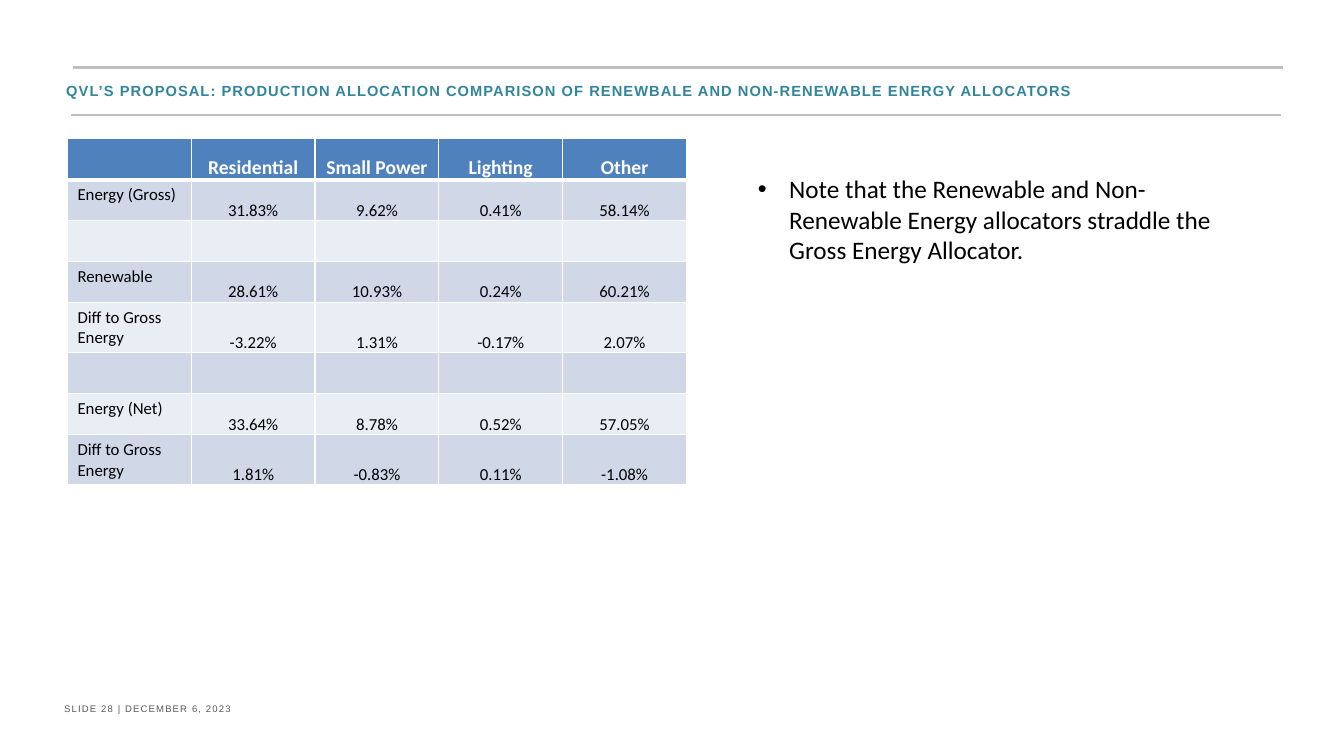
from lxml import etree
from pptx import Presentation, util as u
from pptx.dml import color
from pptx.enum import shapes, text
from pptx.oxml import ns

HEADINGS = ["", "Residential", "Small Power", "Lighting", "Other"]
BLANK_ROW = [""] * 5
ALLOCATORS = [
    HEADINGS,
    ["Energy (Gross)", "31.83%", "9.62%", "0.41%", "58.14%"],
    BLANK_ROW,
    ["Renewable", "28.61%", "10.93%", "0.24%", "60.21%"],
    ["Diff to Gross Energy", "-3.22%", "1.31%", "-0.17%", "2.07%"],
    BLANK_ROW,
    ["Energy (Net)", "33.64%", "8.78%", "0.52%", "57.05%"],
    ["Diff to Gross Energy", "1.81%", "-0.83%", "0.11%", "-1.08%"],
]


def rgb(value):
    return color.RGBColor.from_string(value)


def add_element(parent, tag, **attributes):
    return etree.SubElement(parent, ns.qn(tag), attributes)


class AllocationSlide:
    RULE = "BFBFBF"
    HEADER = "4F81BD"
    BANDS = ["E9EDF4", "D0D8E8"]
    TITLE = dict(name="Arial", size=u.Pt(10.5), bold=True, color="31859C")
    FOOTER = dict(name="Arial", size=u.Pt(6.8), color="595959")
    NOTE = dict(name="Calibri", size=u.Pt(18), color="000000")
    HEADING = dict(name="Calibri", size=u.Pt(14), bold=True, color="FFFFFF")
    BODY = dict(name="Calibri", size=u.Pt(12), bold=False, color="000000")
    VALUE_CELL = dict(
        vertical_anchor=text.MSO_ANCHOR.BOTTOM,
        margin_left=u.Cm(0.02),
        margin_right=u.Cm(0.02),
        margin_top=u.Cm(0.02),
        margin_bottom=0,
    )

    def __init__(self, deck):
        self.slide = deck.slides.add_slide(deck.slide_layouts[6])

    def style(self, font, values):
        for key, value in values.items():
            if key == "color":
                font.color.rgb = rgb(value)
            else:
                setattr(font, key, value)

    def rule(self, left, top, width):
        line = self.slide.shapes.add_connector(
            shapes.MSO_CONNECTOR.STRAIGHT,
            u.Cm(left), u.Cm(top), u.Cm(left + width), u.Cm(top),
        )
        line.line.color.rgb = rgb(self.RULE)
        line.line.width = u.Pt(1.5)
        add_element(line._element.spPr, "a:effectLst")

    def label(self, words, box, values, spacing=None, bullet=None,
              anchor=text.MSO_ANCHOR.TOP):
        frame = self.slide.shapes.add_textbox(*map(u.Cm, box)).text_frame
        frame.word_wrap = True
        frame.vertical_anchor = anchor
        paragraph = frame.paragraphs[0]
        if bullet:
            properties = paragraph._p.get_or_add_pPr()
            indent = u.Cm(0.79)
            properties.set("marL", str(indent))
            properties.set("indent", str(-indent))
            add_element(properties, "a:buFont", typeface="Arial")
            add_element(properties, "a:buChar", char=bullet)
        run = paragraph.add_run()
        run.text = words
        self.style(run.font, values)
        if spacing:
            run._r.get_or_add_rPr().set("spc", str(spacing))

    def borders(self, cell, bottom):
        properties = cell._tc.get_or_add_tcPr()
        for side, points in zip("LRTB", (1, 1, 1, bottom)):
            edge = add_element(properties, f"a:ln{side}", w=str(u.Pt(points)))
            fill = add_element(edge, "a:solidFill")
            add_element(fill, "a:srgbClr", val="FFFFFF")

    def table(self, rows, left, top, column_width, row_height):
        grid = self.slide.shapes.add_table(
            len(rows), len(rows[0]), u.Cm(left), u.Cm(top),
            u.Cm(column_width * len(rows[0])), u.Cm(row_height * len(rows)),
        ).table
        for r, row in enumerate(rows):
            for c, words in enumerate(row):
                cell = grid.cell(r, c)
                self.borders(cell, bottom=1 if r else 3)
                cell.fill.solid()
                cell.fill.fore_color.rgb = rgb(self.BANDS[r % 2] if r else self.HEADER)
                if not words:
                    continue
                cell.text = words
                paragraph = cell.text_frame.paragraphs[0]
                self.style(paragraph.runs[0].font, self.BODY if r else self.HEADING)
                if c:
                    paragraph.alignment = text.PP_ALIGN.CENTER
                    for key, value in self.VALUE_CELL.items():
                        setattr(cell, key, value)


def main():
    deck = Presentation()
    deck.slide_width, deck.slide_height = u.Cm(33.87), u.Cm(19.05)
    page = AllocationSlide(deck)
    page.rule(1.8, 2.9, 30.48)
    page.label("SLIDE 28 | DECEMBER 6, 2023", (1.37, 17.58, 9.07, 0.53),
               page.FOOTER, spacing=80)
    page.rule(1.85, 1.7, 30.48)
    page.label(
        "QVL’S PROPOSAL: PRODUCTION ALLOCATION COMPARISON OF RENEWBALE "
        "AND NON-RENEWABLE ENERGY ALLOCATORS",
        (1.42, 1.7, 31.04, 1.19), page.TITLE, spacing=80,
        anchor=text.MSO_ANCHOR.MIDDLE,
    )
    page.table(ALLOCATORS, 1.7, 3.5, 3.12, 1.03)
    page.label(
        "Note that the Renewable and Non-Renewable Energy allocators "
        "straddle the Gross Energy Allocator.",
        (18.85, 4.25, 12.67, 3.34), page.NOTE, bullet="•",
    )
    deck.save("out.pptx")


if __name__ == "__main__":
    main()
